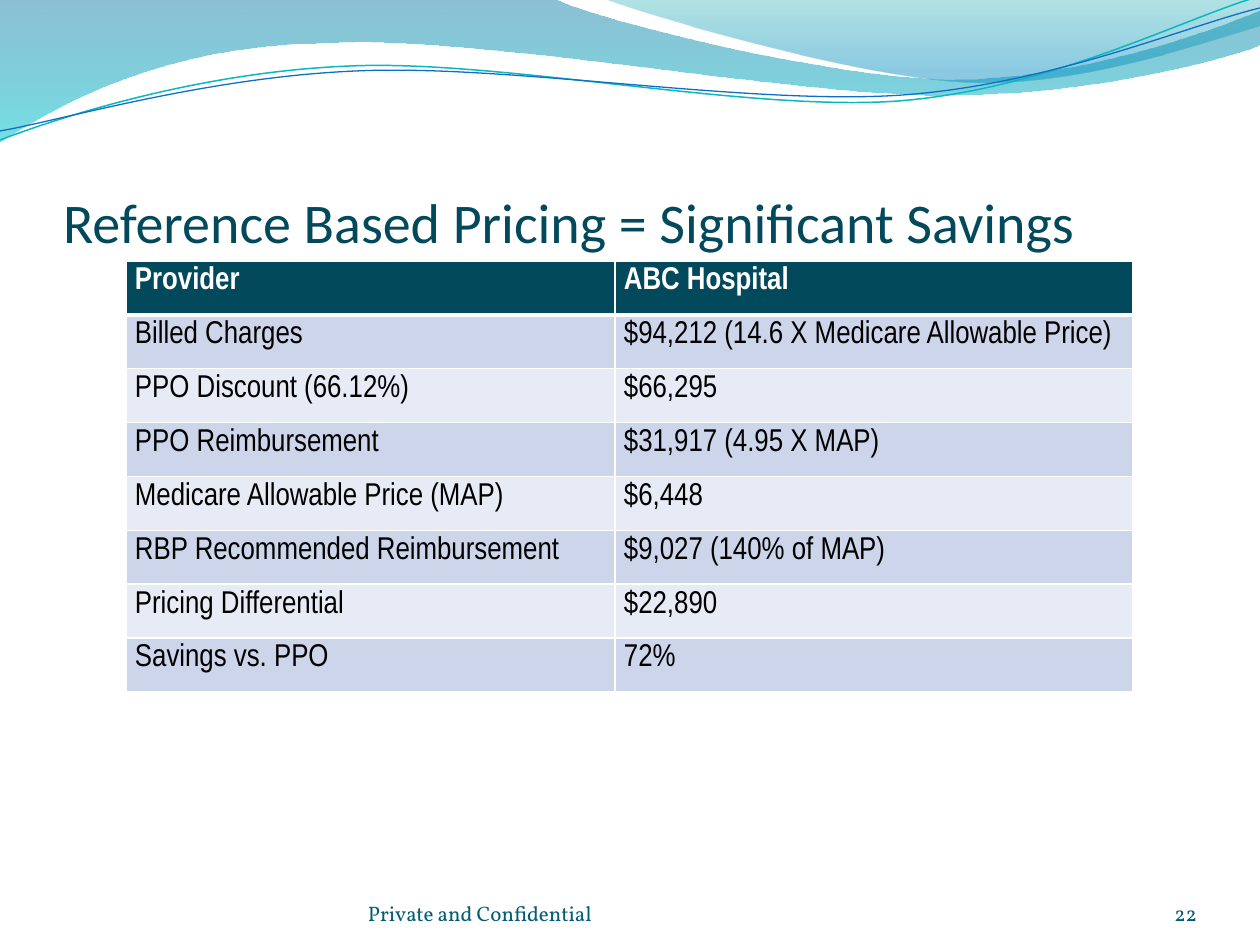
import dataclasses

import pptx
import pptx.dml.color
import pptx.enum.text
import pptx.oxml
import pptx.oxml.ns
import pptx.util

SCALE = 914400 / 126  # EMU in one px
ALIGN = pptx.enum.text.PP_ALIGN
ANCHOR = pptx.enum.text.MSO_ANCHOR


@dataclasses.dataclass(frozen=True)
class Theme:
    heading: str = "03495C"
    footer: str = "045D75"
    body: str = "000000"
    white: str = "FFFFFF"
    bands: tuple = ("CCD5EA", "E7EBF5")
    teal_line: str = "0AB8BF"
    blue_line: str = "0F6FC6"
    # Gradient stops: position, colour, opacity in percent
    wide_wave: tuple = ((0, "0074A1", 45), (100, "00C6CF", 55))
    right_wave: tuple = ((0, "00A1A9", 30), (80, "008BBF", 45))
    title_font: str = "Calibri"
    table_font: str = "Arial Narrow"
    footer_font: str = "Vollkorn"
    title_size: int = 32
    table_size: int = 18
    footer_size: int = 12


def px(length):
    return pptx.util.Emu(round(length * SCALE))


def rgb(colour):
    return pptx.dml.color.RGBColor.from_string(colour)


def add_span(para, text, *, font, size, colour, bold=False):
    span = para.add_run()
    span.text = text
    span.font.name = font
    span.font.size = pptx.util.Pt(size)
    span.font.bold = bold
    span.font.color.rgb = rgb(colour)


def write(frame, text, *, align=ALIGN.LEFT, bottom_anchor=True, insets=(0, 0, 0, 0), **style):
    """Put one formatted paragraph in a text frame; insets go left, top, right, bottom."""
    frame.word_wrap = True
    frame.auto_size = pptx.enum.text.MSO_AUTO_SIZE.NONE
    frame.vertical_anchor = ANCHOR.BOTTOM if bottom_anchor else ANCHOR.TOP
    (frame.margin_left, frame.margin_top,
     frame.margin_right, frame.margin_bottom) = map(px, insets)
    para = frame.paragraphs[0]
    para.alignment = align
    add_span(para, text, **style)


def bend(shape, path):
    """Turn each run of three line segments that stands for a Bézier part into one curve."""
    lines = iter(shape.element.xpath(".//a:path/a:lnTo"))
    for part in path[1:]:
        first = next(lines)
        if len(part) == 2:
            continue
        curve = pptx.oxml.parse_xml(f'<a:cubicBezTo {pptx.oxml.ns.nsdecls("a")}/>')
        first.addprevious(curve)
        for line in (first, next(lines), next(lines)):
            curve.append(line[0])
            line.getparent().remove(line)


def add_border(cell, side, points, colour):
    line = pptx.oxml.parse_xml(
        f'<a:ln{side} {pptx.oxml.ns.nsdecls("a")} w="{pptx.util.Pt(points)}">'
        f'<a:solidFill><a:srgbClr val="{colour}"/></a:solidFill></a:ln{side}>')
    cell._tc.get_or_add_tcPr().append(line)


class SlideBuilder:
    def __init__(self, deck, theme):
        self.theme = theme
        self.page = deck.slides.add_slide(deck.slide_layouts[5])

    def outline(self, path, close):
        """Draw a path in which two numbers are a corner and six a Bézier segment."""
        start, *rest = [(px(part[i]), px(part[i + 1]))
                        for part in path for i in range(0, len(part), 2)]
        builder = self.page.shapes.build_freeform(*start, scale=1.0)
        builder.add_line_segments(rest, close=close)
        shape = builder.convert_to_shape()
        shape.shadow.inherit = False
        bend(shape, path)
        return shape

    def wave(self, path, stops):
        shape = self.outline(path, close=True)
        shape.line.fill.background()
        shape.fill.gradient()
        shape.fill.gradient_angle = 270
        for stop, (position, colour, _) in zip(shape.fill.gradient_stops, stops):
            stop.position = position / 100
            stop.color.rgb = rgb(colour)
        for node, (_, _, opacity) in zip(shape.element.xpath(".//a:gs/a:srgbClr"), stops):
            node.append(pptx.oxml.parse_xml(
                f'<a:alpha {pptx.oxml.ns.nsdecls("a")} val="{opacity * 1000}"/>'))

    def curve(self, path, colour, points):
        shape = self.outline(path, close=False)
        shape.fill.background()
        shape.line.color.rgb = rgb(colour)
        shape.line.width = pptx.util.Pt(points)

    def title(self, text, left, top, width, height):
        box = self.page.shapes.title
        box.left, box.top, box.width, box.height = map(px, (left, top, width, height))
        write(box.text_frame, text, font=self.theme.title_font, size=self.theme.title_size,
              colour=self.theme.heading, insets=(0, 6, 0, 0))

    def footer(self, text, left, top, width, height, align=ALIGN.LEFT):
        box = self.page.shapes.add_textbox(*map(px, (left, top, width, height)))
        write(box.text_frame, text, font=self.theme.footer_font,
              size=self.theme.footer_size, colour=self.theme.footer, align=align)

    def table(self, rows, left, top, widths, height):
        """Fill a table; the body cells take their white borders from its style."""
        theme = self.theme
        table = self.page.shapes.add_table(
            len(rows), len(widths), px(left), px(top), px(sum(widths)), px(height)).table
        for column, width in zip(table.columns, widths):
            column.width = px(width)
        for index, texts in enumerate(rows):
            header = index == 0
            fill = theme.heading if header else theme.bands[(index - 1) % 2]
            for cell, text in zip(table.rows[index].cells, texts):
                if header:
                    for side, points in zip("LRTB", (1, 1, 1, 3)):
                        add_border(cell, side, points, theme.white)
                cell.fill.solid()
                cell.fill.fore_color.rgb = rgb(fill)
                (cell.margin_left, cell.margin_top,
                 cell.margin_right, cell.margin_bottom) = map(px, (9, 6, 9, 6))
                add_span(cell.text_frame.paragraphs[0], text, font=theme.table_font,
                         size=theme.table_size, bold=header,
                         colour=theme.white if header else theme.body)


WIDE_WAVE = [(0, 0), (554, -1), (600, 21, 837, 79, 955, 79), (1075, 79, 1207, 33, 1260, 11),
             (1261, 45), (1239, 55, 1096, 96, 940, 95), (784, 95, 481, 35, 324, 43),
             (163, 45, 58, 105, -1, 142), (0, 0)]
RIGHT_WAVE = [(604, -1), (641, 14, 859, 78, 969, 82), (1079, 87, 1211, 40, 1260, 26),
              (1260, 0), (604, -1)]
TEAL_CURVE = [(0, 140), (60, 117, 199, 72, 349, 66), (498, 59, 747, 112, 898, 101),
              (1050, 89, 1182, 19, 1257, -3)]
BLUE_CURVE = [(0, 131), (59, 121, 207, 77, 357, 71), (508, 64, 752, 106, 903, 95),
              (1053, 84, 1186, 26, 1260, 8)]
PRICING = [
    ("Provider", "ABC Hospital"),
    ("Billed Charges", "$94,212 (14.6 X Medicare Allowable Price)"),
    ("PPO Discount (66.12%)", "$66,295"),
    ("PPO Reimbursement", "$31,917 (4.95 X MAP)"),
    ("Medicare Allowable Price (MAP)", "$6,448"),
    ("RBP Recommended Reimbursement", "$9,027 (140% of MAP)"),
    ("Pricing Differential", "$22,890"),
    ("Savings vs. PPO", "72%"),
]


def main():
    deck = pptx.Presentation()
    deck.slide_width, deck.slide_height = px(1260), px(945)
    theme = Theme()
    slide = SlideBuilder(deck, theme)
    slide.wave(WIDE_WAVE, theme.wide_wave)
    slide.wave(RIGHT_WAVE, theme.right_wave)
    slide.curve(TEAL_CURVE, theme.teal_line, 0.85)
    slide.curve(BLUE_CURVE, theme.blue_line, 0.75)
    slide.title("Reference Based Pricing = Significant Savings", 63, 97, 1134, 158)
    slide.table(PRICING, 126, 261, widths=(489, 518), height=431)
    slide.footer("Private and Confidential", 368, 876, 462, 50)
    slide.footer("22", 1092, 876, 105, 50, align=ALIGN.RIGHT)
    deck.save("out.pptx")


if __name__ == "__main__":
    main()
